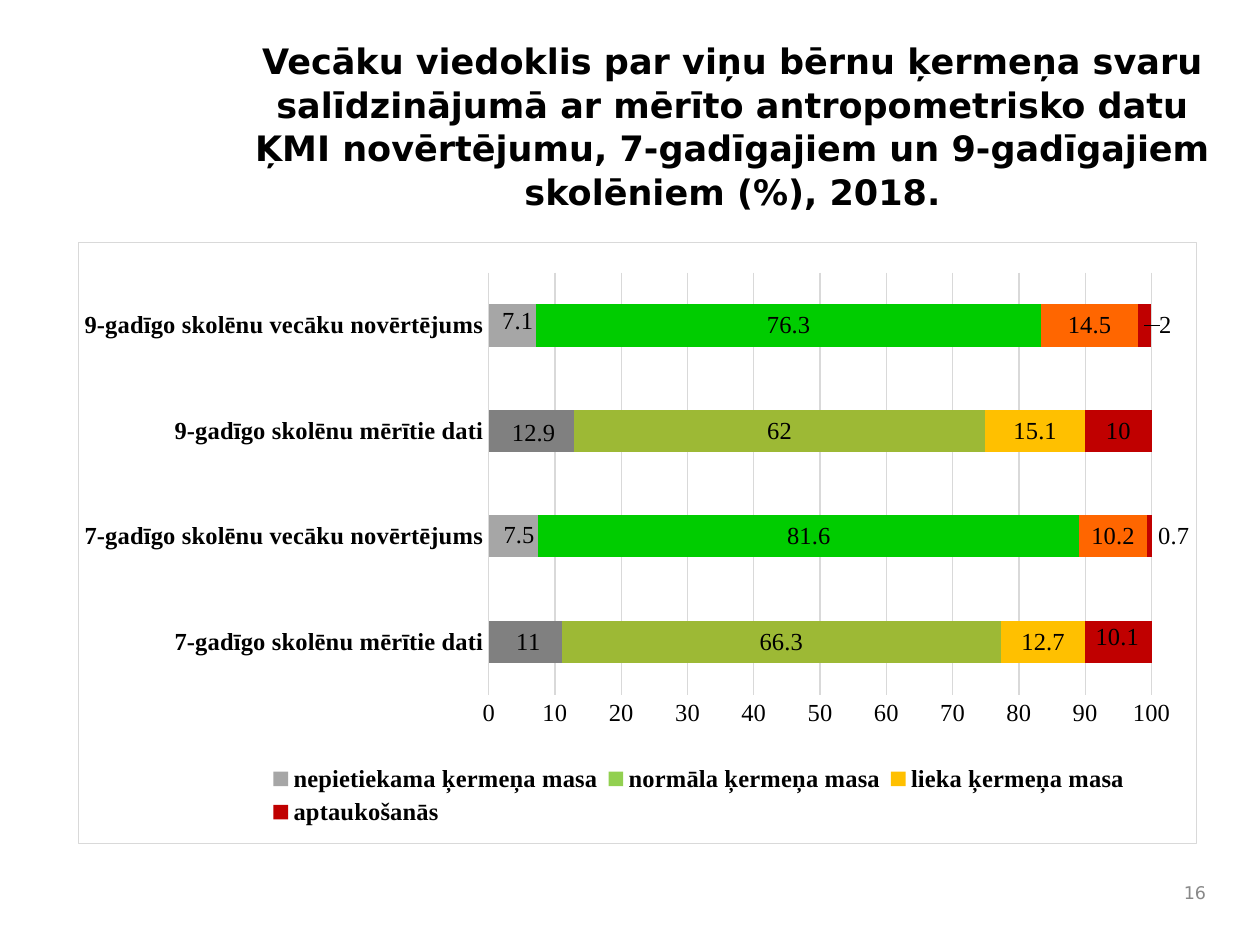
from dataclasses import dataclass

from lxml.etree import SubElement
from pptx import Presentation
from pptx.chart.data import CategoryChartData
from pptx.dml.color import RGBColor
from pptx.enum.chart import XL_CHART_TYPE as ChartType
from pptx.enum.chart import XL_LEGEND_POSITION as LegendPos
from pptx.enum.chart import XL_TICK_MARK as Tick
from pptx.enum.text import MSO_ANCHOR as Anchor
from pptx.enum.text import PP_ALIGN as Align
from pptx.oxml import parse_xml
from pptx.oxml.ns import nsdecls, qn
from pptx.util import Cm, Pt


@dataclass(frozen=True)
class Theme:
    text_font: str = "DejaVu Sans"
    chart_font: str = "Times New Roman"
    text: str = "000000"
    muted: str = "898989"
    grid: str = "D9D9D9"
    title_size: int = 20
    chart_size: int = 14
    number_size: int = 10
    line: float = 0.75
    grey: str = "A6A6A6"
    dark_grey: str = "808080"
    light_green: str = "92D050"
    olive: str = "9DB935"
    green: str = "00CC00"
    amber: str = "FFC000"
    orange: str = "FF6600"
    red: str = "C00000"


T = Theme()

TITLE = ("Vecāku viedoklis par viņu bērnu ķermeņa svaru salīdzinājumā ar mērīto "
         "antropometrisko datu ĶMI novērtējumu, 7-gadīgajiem un 9-gadīgajiem "
         "skolēniem (%), 2018.")
CATEGORIES = [f"{age}-gadīgo skolēnu {kind}" for age in (7, 9)
              for kind in ("mērītie dati", "vecāku novērtējums")]

# Name, values, series colour, (measured, parents') bar colours, label shifts by point
SERIES = [
    ("nepietiekama ķermeņa masa", (11, 7.5, 12.9, 7.1), T.grey, (T.dark_grey, T.grey),
     {0: (0.003, 0), 1: (0.005, -0.003), 2: (0.002, 0.003), 3: (0.005, -0.007)}),
    ("normāla ķermeņa masa", (66.3, 81.6, 62, 76.3), T.light_green, (T.olive, T.green), {}),
    ("lieka ķermeņa masa", (12.7, 10.2, 15.1, 14.5), T.amber, (T.amber, T.orange), {}),
    ("aptaukošanās", (10.1, 0.7, 10, 2), T.red, (T.red, T.red),
     {0: (-0.001, -0.008), 1: (0.022, 0), 3: (0.019, 0)}),
]


def set_attrs(obj, values):
    for name, value in values.items():
        setattr(obj, name, value)


def style_font(font, name, size, color, bold=False):
    set_attrs(font, {"name": name, "size": Pt(size), "bold": bold})
    font.color.rgb = RGBColor.from_string(color)


def style_chart_font(font, bold=False):
    style_font(font, T.chart_font, T.chart_size, T.text, bold)


def style_fill(fmt, color):
    fmt.fill.solid()
    fmt.fill.fore_color.rgb = RGBColor.from_string(color)


def style_line(line):
    line.width = Pt(T.line)
    line.color.rgb = RGBColor.from_string(T.grid)


def add_text(s, text, box, size, color, align, anchor, bold=False, spacing=1.0):
    tf = s.shapes.add_textbox(*map(Cm, box)).text_frame
    set_attrs(tf, {"word_wrap": True, "vertical_anchor": anchor})
    p = tf.paragraphs[0]
    set_attrs(p, {"alignment": align, "line_spacing": spacing})
    r = p.add_run()
    r.text = text
    style_font(r.font, T.text_font, size, color, bold)


def manual_layout(**values):
    layout = parse_xml(f"<c:layout {nsdecls('c')}/>")
    manual = SubElement(layout, qn("c:manualLayout"))
    for name, value in values.items():
        SubElement(manual, qn(f"c:{name}")).set("val", str(value))
    return layout


def place_parts(chart):
    # Plot area
    area = chart._chartSpace.find(".//" + qn("c:plotArea"))
    for old in area.findall(qn("c:layout")):
        area.remove(old)
    area.insert(0, manual_layout(layoutTarget="inner", xMode="edge", yMode="edge",
                                 x=0.367, y=0.05, w=0.593, h=0.702))
    # Legend
    legend = chart._chartSpace.find(".//" + qn("c:legend"))
    for old in legend.findall(qn("c:layout")):
        legend.remove(old)
    legend.find(qn("c:legendPos")).addnext(
        manual_layout(xMode="edge", yMode="edge", x=0.165, y=0.86, w=0.78, h=0.12))
    # Frame
    chart._chartSpace.find(qn("c:chart")).addnext(parse_xml(
        f'<c:spPr {nsdecls("c", "a")}><a:noFill/><a:ln w="{Pt(T.line)}"><a:solidFill>'
        f'<a:srgbClr val="{T.grid}"/></a:solidFill></a:ln></c:spPr>'))


def style_series(series, color, bar_colors, shifts):
    style_fill(series.format, color)
    for i in range(len(CATEGORIES)):
        style_fill(series.points[i].format, bar_colors[i % 2])
    labels = series.data_labels
    labels.show_value = True
    style_chart_font(labels.font)
    for i, (dx, dy) in shifts.items():
        style_chart_font(series.points[i].data_label.font)
        for label in series._element.iter(qn("c:dLbl")):
            idx = label.find(qn("c:idx"))
            if idx.get("val") == str(i):
                idx.addnext(manual_layout(x=dx, y=dy))


def style_axes(chart):
    cat, val = chart.category_axis, chart.value_axis
    for axis in (cat, val):
        set_attrs(axis, {"major_tick_mark": Tick.NONE, "minor_tick_mark": Tick.NONE})
        style_chart_font(axis.tick_labels.font, bold=axis is cat)
    style_line(cat.format.line)
    set_attrs(val, {"minimum_scale": 0, "maximum_scale": 100, "major_unit": 10,
                    "has_major_gridlines": True})
    style_line(val.major_gridlines.format.line)
    val.format.line.fill.background()


def add_bar_chart(s, box):
    data = CategoryChartData()
    data.categories = CATEGORIES
    for name, values, *_ in SERIES:
        data.add_series(name, values)
    chart = s.shapes.add_chart(ChartType.BAR_STACKED, *map(Cm, box), data).chart
    set_attrs(chart, {"has_title": False, "has_legend": True})
    style_chart_font(chart.font)
    set_attrs(chart.legend, {"position": LegendPos.BOTTOM, "include_in_layout": False})
    style_chart_font(chart.legend.font, bold=True)
    plot = chart.plots[0]
    set_attrs(plot, {"gap_width": 150, "overlap": 100, "vary_by_categories": False})
    for series, (_, _, color, bar_colors, shifts) in zip(plot.series, SERIES):
        style_series(series, color, bar_colors, shifts)
    style_axes(chart)
    place_parts(chart)


def main():
    prs = Presentation()
    set_attrs(prs, {"slide_width": Cm(25.4), "slide_height": Cm(19.05)})
    s = prs.slides.add_slide(prs.slide_layouts[6])
    # Title
    add_text(s, TITLE, (4.8, 0.64, 19.94, 3.68), T.title_size, T.text,
             Align.CENTER, Anchor.TOP, bold=True, spacing=1.04)
    # Chart
    add_bar_chart(s, (1.57, 4.88, 22.56, 12.14))
    # Slide number
    add_text(s, "16", (23.32, 17.58, 1.24, 0.84), T.number_size, T.muted,
             Align.RIGHT, Anchor.MIDDLE)
    prs.save("out.pptx")


if __name__ == "__main__":
    main()
